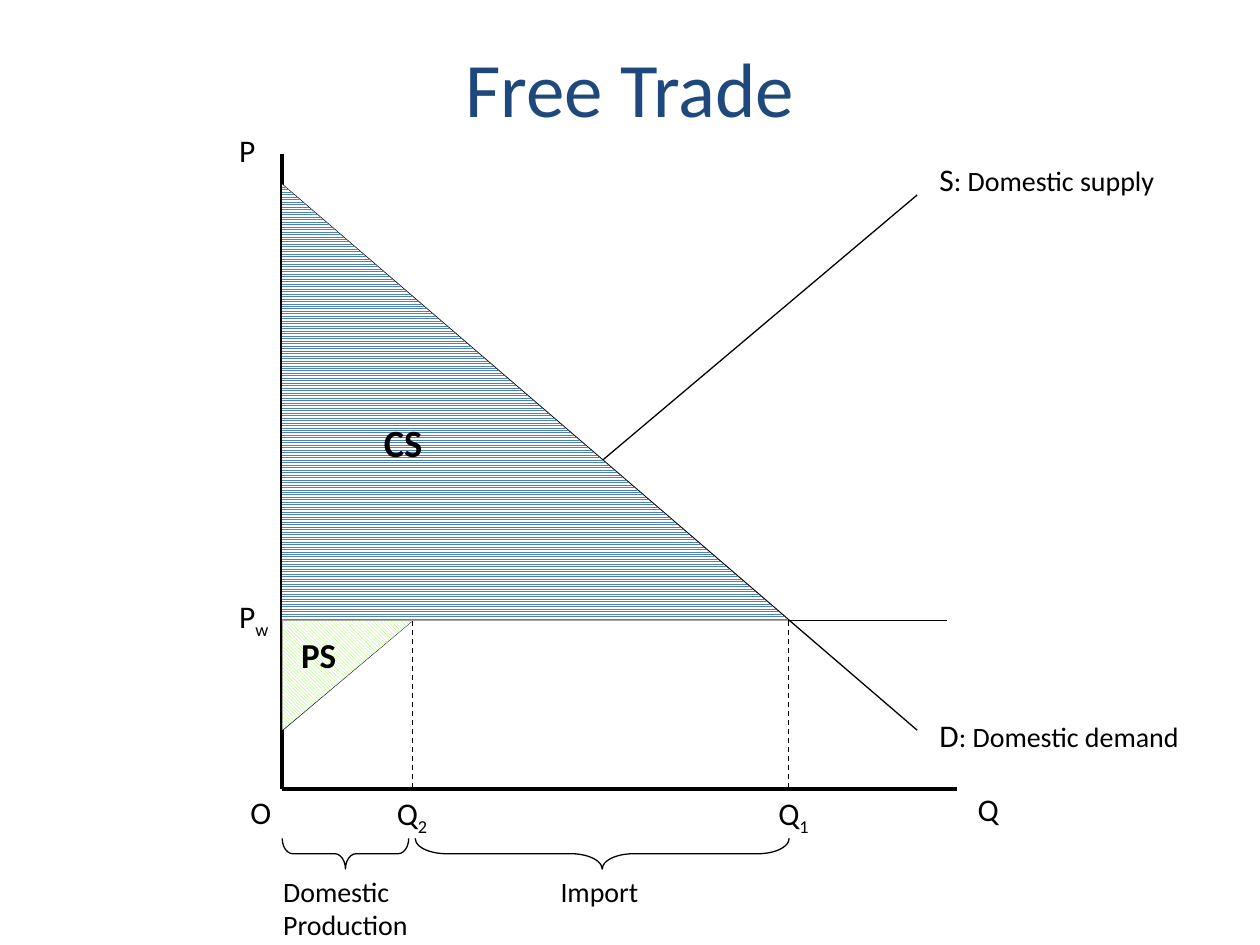
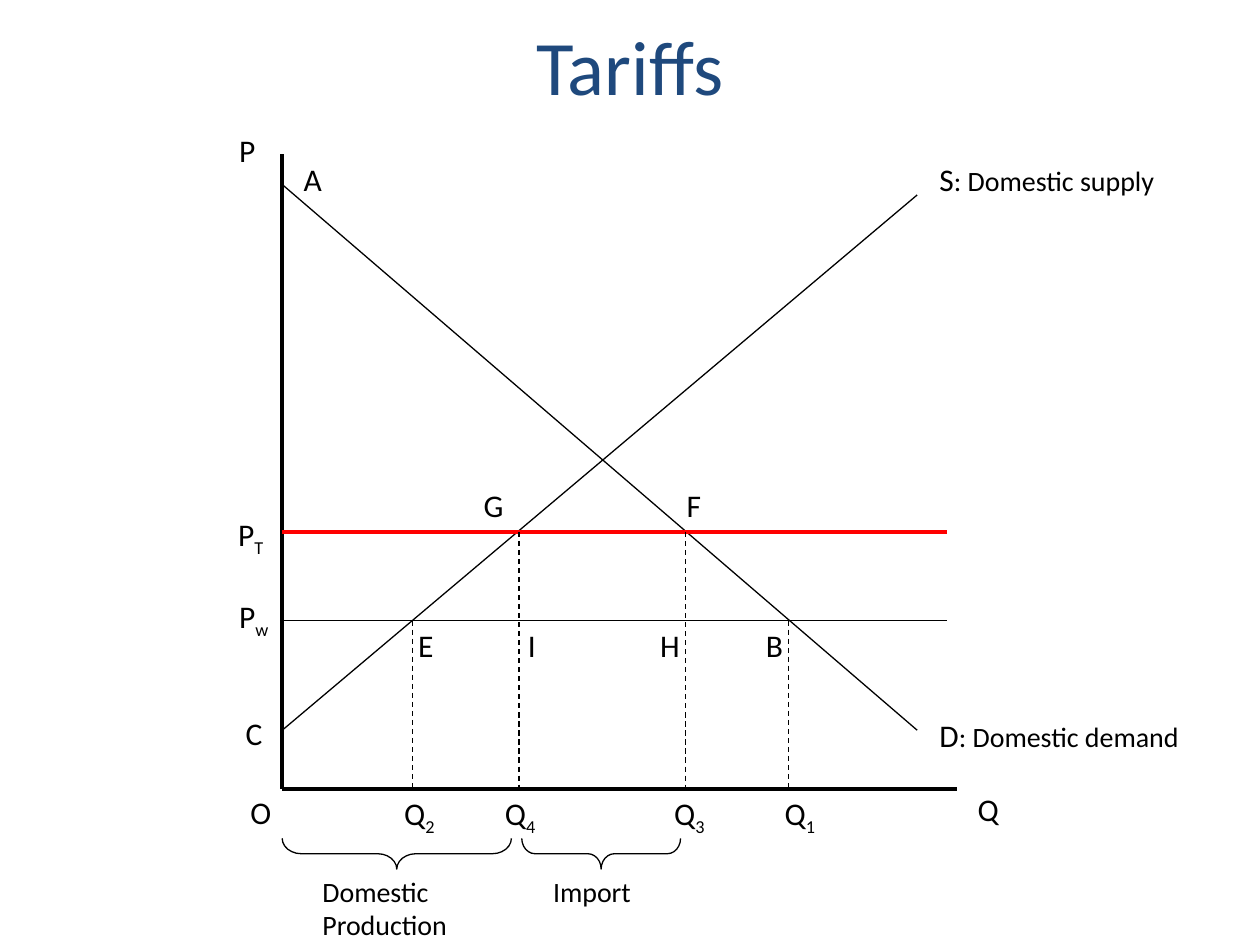
from dataclasses import dataclass, field

from lxml.etree import SubElement
from pptx import Presentation
from pptx.dml.color import RGBColor
from pptx.enum.dml import MSO_LINE, MSO_PATTERN
from pptx.enum.shapes import MSO_CONNECTOR, MSO_SHAPE
from pptx.enum.text import MSO_ANCHOR, MSO_AUTO_SIZE, PP_ALIGN
from pptx.oxml.ns import qn
from pptx.util import Cm, Pt


@dataclass(frozen=True)
class Theme:
    font: str = "Calibri"
    ink: RGBColor = RGBColor(0, 0, 0)
    paper: RGBColor = RGBColor(255, 255, 255)
    title: RGBColor = RGBColor(0x1F, 0x49, 0x7D)
    tariff: RGBColor = RGBColor(255, 0, 0)
    consumer: RGBColor = RGBColor(0x4F, 0x81, 0xBD)
    producer: RGBColor = RGBColor(0x96, 0xFD, 0x49)
    title_size: float = 44
    consumer_size: float = 22
    producer_size: float = 20
    label_size: float = 18
    note_size: float = 16
    thin: float = 0.75
    thick: float = 2.25


THEME = Theme()

# Diagram geometry in centimetres
ORIGIN_X, AXIS_TOP, AXIS_BASE, AXIS_RIGHT = 5.69, 3.11, 15.91, 19.3
CURVE_RIGHT, CURVE_BOTTOM = 18.49, 14.72
DEMAND_TOP, SUPPLY_TOP = 3.72, 3.93
PRICE_RIGHT, WORLD_PRICE, TARIFF_PRICE = 19.1, 12.51, 10.72
Q1, Q2, Q3, Q4 = 15.9, 8.32, 13.82, 10.46
LABEL_TOP, BRACE_TOP, BRACE_DEPTH, NOTE_TOP = 15.88, 16.9, 0.62, 17.5


@dataclass(frozen=True)
class Label:
    text: str
    left: float
    top: float
    width: float
    subscript: str = ""
    tail: str = ""
    size: float = THEME.label_size
    bold: bool = False


@dataclass(frozen=True)
class Line:
    x1: float
    y1: float
    x2: float
    y2: float
    weight: float = THEME.thin
    color: RGBColor = THEME.ink
    dashed: bool = False


@dataclass(frozen=True)
class Area:
    """A patterned right triangle; turn is its rotation in degrees."""
    left: float
    top: float
    right: float
    bottom: float
    turn: int
    pattern: MSO_PATTERN
    color: RGBColor


@dataclass(frozen=True)
class Brace:
    left: float
    right: float
    note: Label


@dataclass(frozen=True)
class Diagram:
    title: str
    title_top: float
    lines: list[Line]
    labels: list[Label]
    braces: list[Brace]
    areas: list[Area] = field(default_factory=list)


def note(text: str, left: float, width: float) -> Label:
    return Label(text, left, NOTE_TOP, width, size=THEME.note_size)


def quantity(number: str, left: float) -> Label:
    return Label("Q", left, LABEL_TOP, 1.14, subscript=number)


def drop(x: float, price: float) -> Line:
    """Dashed line from a price down to the quantity axis."""
    return Line(x, price, x, AXIS_BASE, dashed=True)


COMMON_LINES = [
    Line(ORIGIN_X, AXIS_TOP, ORIGIN_X, AXIS_BASE, THEME.thick),
    Line(ORIGIN_X, AXIS_BASE, AXIS_RIGHT, AXIS_BASE, THEME.thick),
    Line(ORIGIN_X, CURVE_BOTTOM, CURVE_RIGHT, SUPPLY_TOP),
    Line(ORIGIN_X, DEMAND_TOP, CURVE_RIGHT, CURVE_BOTTOM),
    Line(ORIGIN_X, WORLD_PRICE, PRICE_RIGHT, WORLD_PRICE),
    drop(Q1, WORLD_PRICE),
    drop(Q2, WORLD_PRICE),
]
COMMON_LABELS = [
    Label("Q", 19.46, 15.8, 0.94),
    Label("P", 4.57, 2.51, 0.84),
    Label("O", 4.8, 15.86, 0.94),
    Label("P", 4.57, 11.91, 1.14, subscript="w"),
    Label("S", 18.69, 3.11, 4.85, tail=": Domestic supply"),
    Label("D", 18.69, 14.31, 5.36, tail=": Domestic demand"),
]

DIAGRAMS = [
    Diagram(
        "Free Trade", 0.15, COMMON_LINES,
        COMMON_LABELS + [
            quantity("1", 15.44),
            quantity("2", 7.75),
            Label("CS", 7.49, 8.33, 2.01, size=THEME.consumer_size, bold=True),
            Label("PS", 5.82, 12.65, 2.01, size=THEME.producer_size, bold=True),
        ],
        [Brace(ORIGIN_X, 8.24, note("Domestic\nProduction", 5.46, 3.05)),
         Brace(8.37, 15.91, note("Import", 11.05, 2.08))],
        [Area(ORIGIN_X, DEMAND_TOP, Q1, WORLD_PRICE, 0,
              MSO_PATTERN.NARROW_HORIZONTAL, THEME.consumer),
         Area(ORIGIN_X, WORLD_PRICE, Q2, CURVE_BOTTOM, 90,
              MSO_PATTERN.DARK_DOWNWARD_DIAGONAL, THEME.producer)],
    ),
    Diagram(
        "Tariffs", -0.28,
        COMMON_LINES + [
            Line(ORIGIN_X, TARIFF_PRICE, PRICE_RIGHT, TARIFF_PRICE,
                 THEME.thick, THEME.tariff),
            drop(Q3, TARIFF_PRICE),
            drop(Q4, TARIFF_PRICE),
        ],
        COMMON_LABELS + [
            quantity("1", 15.57),
            quantity("2", 7.9),
            quantity("3", 13.34),
            quantity("4", 9.93),
            Label("P", 4.55, 10.26, 1.04, subscript="T"),
            Label("A", 5.87, 3.11, 0.89),
            Label("G", 9.5, 9.68, 0.91),
            Label("F", 13.59, 9.68, 0.81),
            Label("E", 8.18, 12.5, 0.81),
            Label("I", 10.39, 12.5, 0.66),
            Label("H", 13.06, 12.5, 0.91),
            Label("B", 15.19, 12.5, 0.86),
            Label("C", 4.7, 14.27, 0.86),
        ],
        [Brace(ORIGIN_X, 10.31, note("Domestic\nProduction", 6.25, 3.05)),
         Brace(10.52, 13.72, note("Import", 10.9, 2.08))],
    ),
]


def add_line(shapes, line: Line) -> None:
    connector = shapes.add_connector(
        MSO_CONNECTOR.STRAIGHT, Cm(line.x1), Cm(line.y1), Cm(line.x2), Cm(line.y2))
    connector.line.width = Pt(line.weight)
    connector.line.color.rgb = line.color
    if line.dashed:
        connector.line.dash_style = MSO_LINE.DASH
    SubElement(connector._element.spPr, qn("a:effectLst"))


def add_turned(shapes, preset: MSO_SHAPE, left: float, top: float,
               right: float, bottom: float, turn: int):
    """Add a preset that fills the given box after its rotation."""
    width, height = right - left, bottom - top
    if turn % 180:
        width, height = height, width
    shape = shapes.add_shape(
        preset, Cm((left + right - width) / 2), Cm((top + bottom - height) / 2),
        Cm(width), Cm(height))
    shape.rotation = turn
    shape.shadow.inherit = False
    return shape


def add_area(shapes, area: Area) -> None:
    triangle = add_turned(shapes, MSO_SHAPE.RIGHT_TRIANGLE, area.left, area.top,
                          area.right, area.bottom, area.turn)
    triangle.fill.patterned()
    triangle.fill.pattern = area.pattern
    triangle.fill.fore_color.rgb = area.color
    triangle.fill.back_color.rgb = THEME.paper
    triangle.line.fill.background()


def add_brace(shapes, brace: Brace) -> None:
    curve = add_turned(shapes, MSO_SHAPE.LEFT_BRACE, brace.left, BRACE_TOP,
                       brace.right, BRACE_TOP + BRACE_DEPTH, 270)
    curve.adjustments[0] = (brace.right - brace.left) / 12 / BRACE_DEPTH
    curve.fill.background()
    curve.line.color.rgb = THEME.ink
    curve.line.width = Pt(THEME.thin)
    add_label(shapes, brace.note)


def style(paragraph, size: float, color: RGBColor, bold: bool = False) -> None:
    font = paragraph.font
    font.name, font.size, font.bold = THEME.font, Pt(size), bold
    font.color.rgb = color


def add_label(shapes, label: Label) -> None:
    rows = label.text.split("\n")
    height = 0.25 + len(rows) * label.size * 0.043
    box = shapes.add_textbox(Cm(label.left), Cm(label.top), Cm(label.width), Cm(height))
    frame = box.text_frame
    frame.word_wrap = False
    frame.auto_size = MSO_AUTO_SIZE.SHAPE_TO_FIT_TEXT
    frame.text = label.text
    for paragraph in frame.paragraphs:
        style(paragraph, label.size, THEME.ink, label.bold)
    if label.subscript:
        lowered = paragraph.add_run()
        lowered.text = label.subscript
        lowered.font._element.set("baseline", "-25000")
    if label.tail:
        meaning = paragraph.add_run()
        meaning.text = label.tail
        meaning.font.size = Pt(THEME.note_size)


def set_title(title, text: str, top: float) -> None:
    title.left, title.top, title.width, title.height = Cm(1.27), Cm(top), Cm(22.86), Cm(3.18)
    frame = title.text_frame
    frame.text = text
    frame.vertical_anchor = MSO_ANCHOR.MIDDLE
    paragraph = frame.paragraphs[0]
    paragraph.alignment = PP_ALIGN.CENTER
    style(paragraph, THEME.title_size, THEME.title)


def add_diagram(deck, diagram: Diagram) -> None:
    slide = deck.slides.add_slide(deck.slide_layouts.get_by_name("Title Only"))
    shapes = slide.shapes
    set_title(shapes.title, diagram.title, diagram.title_top)
    for line in diagram.lines:
        add_line(shapes, line)
    for area in diagram.areas:
        add_area(shapes, area)
    for brace in diagram.braces:
        add_brace(shapes, brace)
    for label in diagram.labels:
        add_label(shapes, label)


def main() -> None:
    deck = Presentation()
    deck.slide_width, deck.slide_height = Cm(25.4), Cm(19.05)
    for diagram in DIAGRAMS:
        add_diagram(deck, diagram)
    deck.save("out.pptx")


if __name__ == "__main__":
    main()
